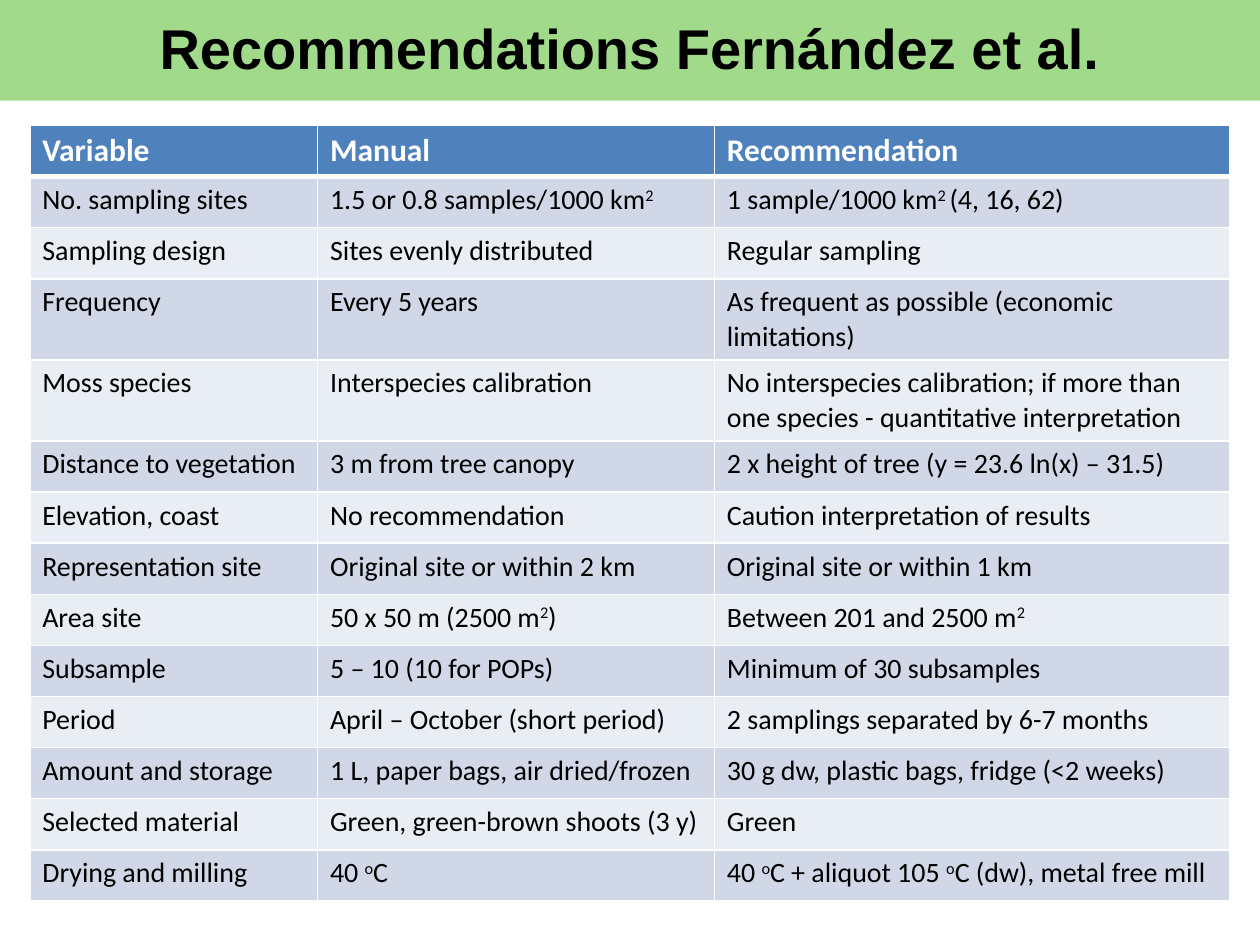
import pptx
import pptx.util
import pptx.dml.color
import pptx.enum.text
import pptx.oxml
import pptx.oxml.ns
from pptx.util import Cm

RGBColor = pptx.dml.color.RGBColor
GREEN = RGBColor(0xA2, 0xDA, 0x8C)
BLUE = RGBColor(0x4F, 0x81, 0xBD)
BAND_DARK = RGBColor(0xD0, 0xD8, 0xE8)
BAND_LIGHT = RGBColor(0xE9, 0xED, 0xF4)
WHITE = RGBColor(0xFF, 0xFF, 0xFF)
BLACK = RGBColor(0x00, 0x00, 0x00)

TITLE_FORMAT = {"name": "Arial", "size": pptx.util.Pt(32), "bold": True}
HEADER_FORMAT = {"name": "Calibri", "size": pptx.util.Pt(18), "bold": True}
BODY_FORMAT = {"name": "Calibri", "size": pptx.util.Pt(16), "bold": False}
SUPERSCRIPT_MARK = "^"

ROWS = [
    ("Variable", "Manual", "Recommendation"),
    ("No. sampling sites", "1.5 or 0.8 samples/1000 km^2", "1 sample/1000 km^2 ^(4, 16, 62)"),
    ("Sampling design", "Sites evenly distributed", "Regular sampling"),
    ("Frequency", "Every 5 years", "As frequent as possible (economic limitations)"),
    ("Moss species", "Interspecies calibration",
     "No interspecies calibration; if more than one species - quantitative interpretation"),
    ("Distance to vegetation", "3 m from tree canopy", "2 x height of tree (y = 23.6 ln(x) – 31.5)"),
    ("Elevation, coast", "No recommendation", "Caution interpretation of results"),
    ("Representation site", "Original site or within 2 km", "Original site or within 1 km"),
    ("Area site", "50 x 50 m (2500 m^2^)", "Between 201 and 2500 m^2"),
    ("Subsample", "5 – 10 (10 for POPs)", "Minimum of 30 subsamples"),
    ("Period", "April – October (short period)", "2 samplings separated by 6-7 months"),
    ("Amount and storage", "1 L, paper bags, air dried/frozen", "30 g dw, plastic bags, fridge (<2 weeks)"),
    ("Selected material", "Green, green-brown shoots (3 y)", "Green"),
    ("Drying and milling", "40 ^o^C", "40 ^o^C + aliquot 105 ^o^C (dw), metal free mill"),
]
COLUMN_WIDTHS = [Cm(5.8), Cm(8), Cm(10.4)]
ROW_HEIGHT = Cm(1.03)


def add_text(paragraph, text, font_format, color):
    for index, piece in enumerate(text.split(SUPERSCRIPT_MARK)):
        if not piece:
            continue
        run = paragraph.add_run()
        run.text = piece
        for attribute, value in font_format.items():
            setattr(run.font, attribute, value)
        run.font.color.rgb = color
        if index % 2:
            run.font._element.set("baseline", "30000")


def add_border(cell, side, points):
    cell._tc.get_or_add_tcPr().append(pptx.oxml.parse_xml(
        f'<a:{side} {pptx.oxml.ns.nsdecls("a")} w="{points * 12700}">'
        f'<a:solidFill><a:srgbClr val="{WHITE}"/></a:solidFill></a:{side}>'))


presentation = pptx.Presentation()
presentation.slide_width = Cm(25.4)
presentation.slide_height = Cm(19.05)
slide = presentation.slides.add_slide(presentation.slide_layouts[5])

title = slide.shapes.title
title_box = {"left": Cm(0), "top": Cm(0), "width": presentation.slide_width, "height": Cm(2.03)}
for attribute, value in title_box.items():
    setattr(title, attribute, value)
title.fill.solid()
title.fill.fore_color.rgb = GREEN
frame_format = {
    "auto_size": pptx.enum.text.MSO_AUTO_SIZE.NONE,
    "vertical_anchor": pptx.enum.text.MSO_ANCHOR.TOP,
    "margin_top": Cm(0.27),
    "word_wrap": True,
}
for attribute, value in frame_format.items():
    setattr(title.text_frame, attribute, value)
paragraph = title.text_frame.paragraphs[0]
paragraph.alignment = pptx.enum.text.PP_ALIGN.CENTER
add_text(paragraph, "Recommendations Fernández et al.", TITLE_FORMAT, BLACK)

table = slide.shapes.add_table(
    len(ROWS), len(COLUMN_WIDTHS), Cm(0.6), Cm(2.53),
    sum(COLUMN_WIDTHS), ROW_HEIGHT * len(ROWS)).table
for column, width in zip(table.columns, COLUMN_WIDTHS):
    column.width = width

for row_index, texts in enumerate(ROWS):
    table.rows[row_index].height = ROW_HEIGHT
    is_header = row_index == 0
    band = BAND_DARK if row_index % 2 else BAND_LIGHT
    for column_index, text in enumerate(texts):
        cell = table.cell(row_index, column_index)
        borders = {"lnL": 1, "lnR": 1, "lnT": 3 if row_index == 1 else 1, "lnB": 3 if is_header else 1}
        for side, points in borders.items():
            add_border(cell, side, points)
        cell.fill.solid()
        cell.fill.fore_color.rgb = BLUE if is_header else band
        add_text(cell.text_frame.paragraphs[0], text,
                 HEADER_FORMAT if is_header else BODY_FORMAT,
                 WHITE if is_header else BLACK)

presentation.save("out.pptx")
